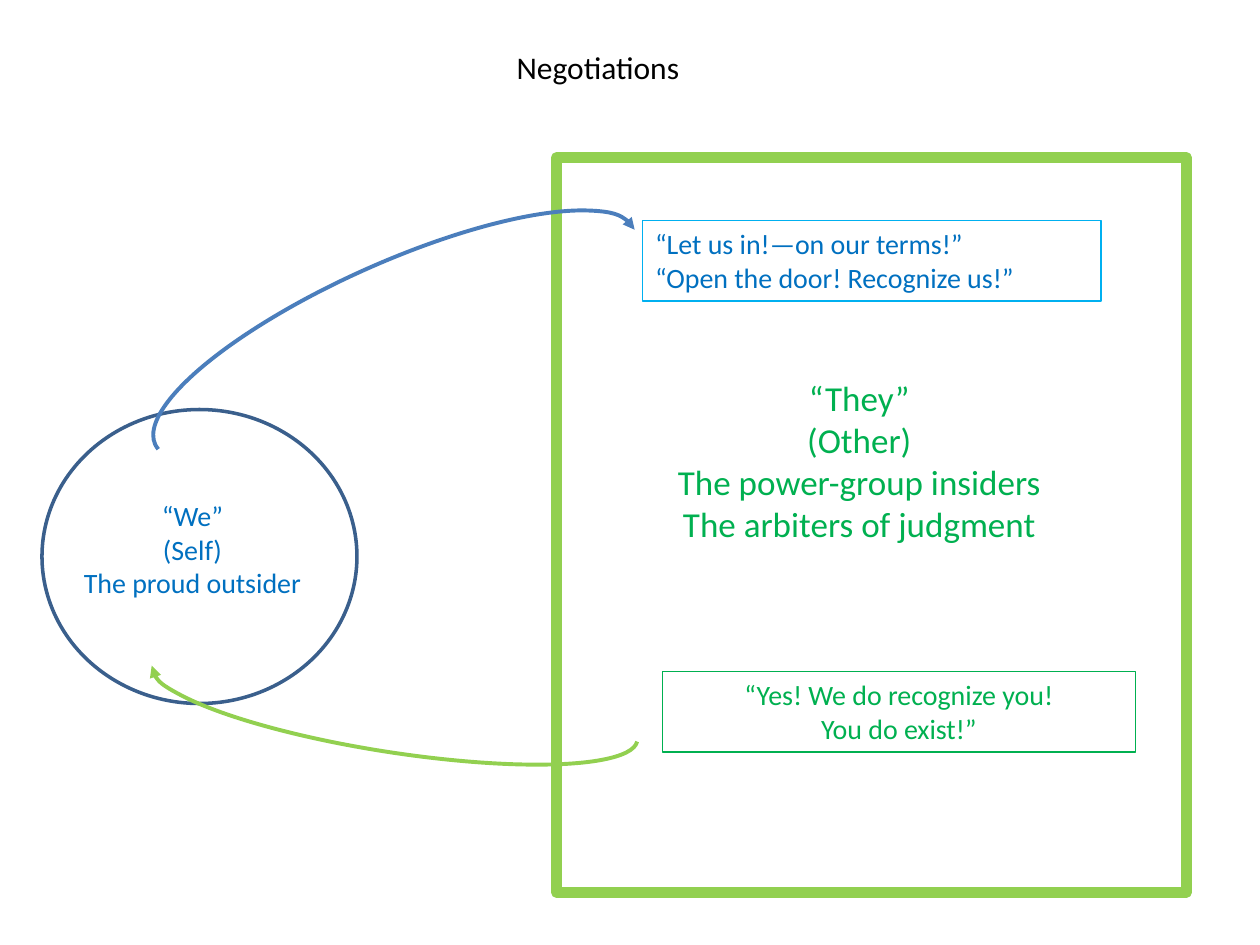
"""Builds the Negotiations slide: two groups and the messages between them."""
from lxml.etree import SubElement
from pptx import Presentation
from pptx.dml.color import RGBColor
from pptx.enum.shapes import MSO_SHAPE
from pptx.enum.text import MSO_ANCHOR, MSO_AUTO_SIZE, PP_ALIGN
from pptx.oxml.ns import qn
from pptx.util import Pt

FONT = "Calibri"
BLACK = "000000"
BLUE = "0070C0"
SKY = "00B0F0"
NAVY = "3A5F8C"
STEEL = "4B7EBC"
GREEN = "00B050"
LIME = "92D050"


def color(hex_text):
    """Return the colour for a hex string."""
    return RGBColor.from_string(hex_text)


class SlideBuilder:
    """Holds the text style and the current slide."""

    def __init__(self, slide, font_name):
        self.slide = slide
        self.font_name = font_name

    def place(self, shape, box):
        """Move a shape to a box of left, top, width and height in points."""
        shape.left, shape.top, shape.width, shape.height = map(Pt, box)

    def add_lines(self, shape, lines, size, text_color, alignment):
        """Add one paragraph per line."""
        frame = shape.text_frame
        frame.word_wrap = True
        frame.auto_size = MSO_AUTO_SIZE.SHAPE_TO_FIT_TEXT
        frame.vertical_anchor = MSO_ANCHOR.TOP
        for index, line in enumerate(lines):
            paragraph = frame.add_paragraph() if index else frame.paragraphs[0]
            paragraph.alignment = alignment
            run = paragraph.add_run()
            run.text = line
            run.font.name = self.font_name
            run.font.size = Pt(size)
            run.font.color.rgb = color(text_color)

    def title(self, box, text):
        """Fill the title placeholder."""
        shape = self.slide.shapes.title
        self.place(shape, box)
        self.add_lines(shape, [text], 18, BLACK, PP_ALIGN.LEFT)

    def outline(self, kind, box, line_color, line_width):
        """Add an unfilled preset shape."""
        shape = self.slide.shapes.add_shape(kind, *map(Pt, box))
        shape.shadow.inherit = False
        shape.fill.background()
        shape.line.color.rgb = color(line_color)
        shape.line.width = Pt(line_width)
        return shape

    def arc_arrow(self, box, rotation, start, line_color):
        """Add a rotated arc that ends in an arrowhead."""
        arc = self.outline(MSO_SHAPE.ARC, box, line_color, 2.25)
        arc.rotation = rotation
        arc.adjustments[0] = start
        arc.adjustments[1] = 0
        line = arc.line._get_or_add_ln()
        SubElement(line, qn("a:tailEnd"), type="triangle")

    def message(self, box, lines, line_color, text_color, alignment):
        """Add an outlined box with a spoken message."""
        shape = self.outline(MSO_SHAPE.RECTANGLE, box, line_color, 0.75)
        self.add_lines(shape, lines, 16, text_color, alignment)

    def label(self, box, lines, size, text_color):
        """Add a centred text box."""
        shape = self.slide.shapes.add_textbox(*map(Pt, box))
        self.add_lines(shape, lines, size, text_color, PP_ALIGN.CENTER)


def main():
    """Build and save the presentation."""
    presentation = Presentation()
    presentation.slide_width = Pt(720)
    presentation.slide_height = Pt(540)
    slide = presentation.slides.add_slide(presentation.slide_layouts[5])
    builder = SlideBuilder(slide, FONT)

    builder.title((288, 24, 120, 29), "Negotiations")
    builder.outline(MSO_SHAPE.OVAL, (24, 234, 180, 168), NAVY, 2)
    builder.outline(MSO_SHAPE.RECTANGLE, (318, 90, 360, 420), LIME, 6)
    builder.arc_arrow((75.6, 150.5, 300.2, 84.2), 335.9, 107.24, STEEL)
    builder.label((24, 281.5, 172, 65.5),
                  ["“We”", "(Self)", "The proud outsider"], 16, BLUE)
    builder.message((367.2, 126, 262, 46),
                    ["“Let us in!—on our terms!”",
                     "“Open the door! Recognize us!”"],
                    SKY, BLUE, PP_ALIGN.LEFT)
    builder.label((367.2, 211.7, 247.7, 104.4),
                  ["“They”", "(Other)", "The power-group insiders",
                   "The arbiters of judgment"], 20, GREEN)
    builder.arc_arrow((85, 373.7, 280.8, 56.2), 188.8, 108.11, LIME)
    builder.message((378.7, 383.8, 270, 46),
                    ["“Yes! We do recognize you!", "You do exist!”"],
                    GREEN, GREEN, PP_ALIGN.CENTER)

    presentation.save("out.pptx")


if __name__ == "__main__":
    main()
